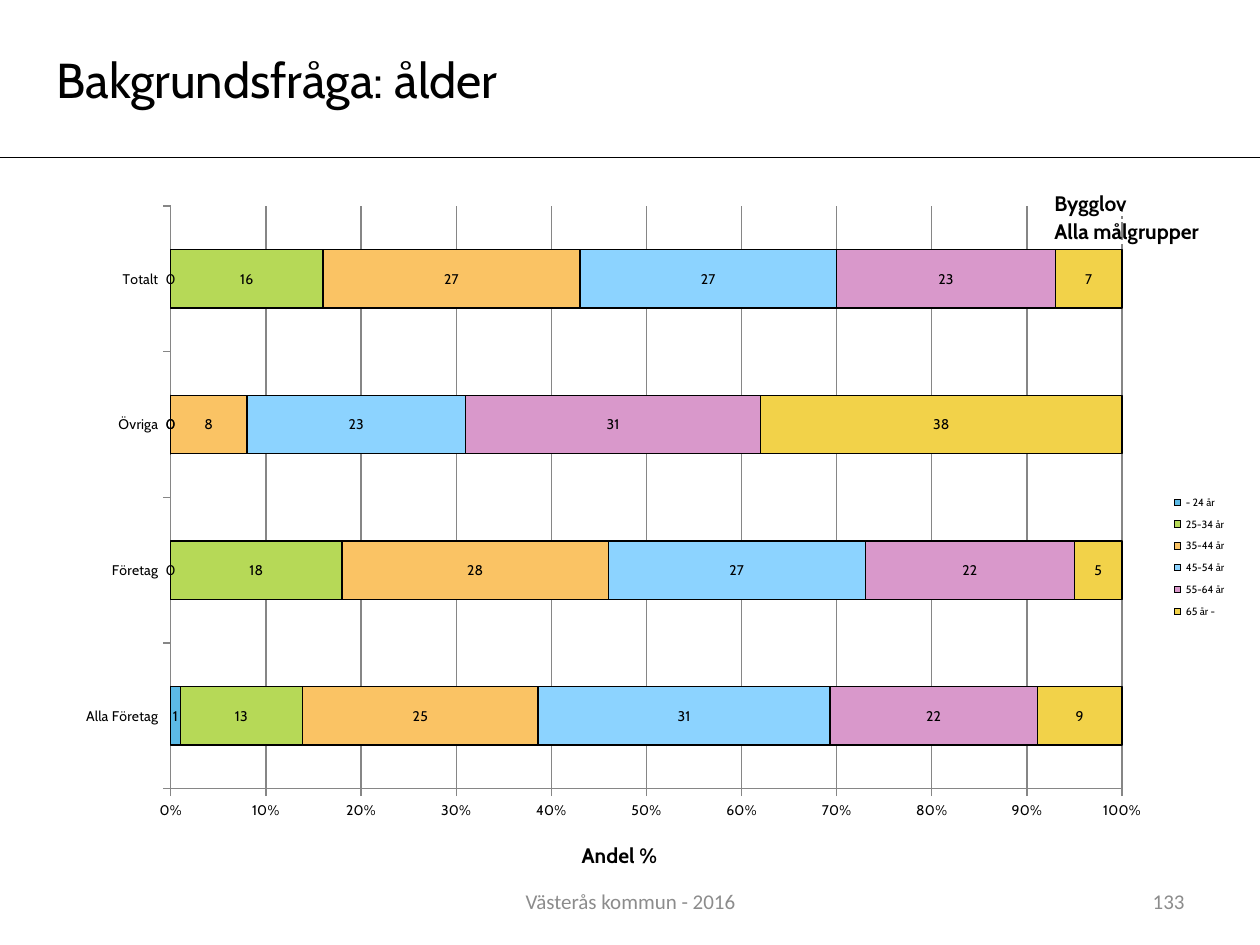
from pptx import Presentation
from pptx.chart.data import CategoryChartData
from pptx.dml.color import RGBColor
from pptx.enum.chart import XL_CHART_TYPE as ChartType, XL_LEGEND_POSITION as LegendPos
from pptx.enum.chart import XL_TICK_MARK as Tick
from pptx.enum.shapes import MSO_CONNECTOR as Connector, MSO_SHAPE as Shape
from pptx.enum.text import MSO_ANCHOR as Anchor, PP_ALIGN as Align
from pptx.oxml import parse_xml
from pptx.oxml.ns import nsdecls, qn
from pptx.util import Inches, Pt

BLACK = RGBColor(0x00, 0x00, 0x00)
WHITE = RGBColor(0xFF, 0xFF, 0xFF)
GRAY = RGBColor(0x8C, 0x8C, 0x8C)
AXIS_GRAY = RGBColor(0x86, 0x86, 0x86)

CATEGORIES = ["Alla Företag", "Företag", "Övriga", "Totalt"]
AGE_GROUPS = [
    ("- 24 år", (1, 0, 0, 0), RGBColor(0x5C, 0xBA, 0xE6)),
    ("25-34 år", (13, 18, 0, 16), RGBColor(0xB6, 0xD9, 0x57)),
    ("35-44 år", (25, 28, 8, 27), RGBColor(0xFA, 0xC3, 0x64)),
    ("45-54 år", (31, 27, 23, 27), RGBColor(0x8C, 0xD3, 0xFF)),
    ("55-64 år", (22, 22, 31, 23), RGBColor(0xD9, 0x98, 0xCB)),
    ("65 år -", (9, 5, 38, 7), RGBColor(0xF2, 0xD2, 0x49)),
]


def style_font(font, size, name="Cabin", color=BLACK, bold=False):
    """Set the face, size, colour and weight of a font."""
    font.name, font.size, font.bold = name, Pt(size), bold
    font.color.rgb = color


def write_text(shape, text, align, **style):
    """Write one vertically centred line of text into a shape."""
    tf = shape.text_frame
    tf.word_wrap = True
    tf.vertical_anchor = Anchor.MIDDLE
    p = tf.paragraphs[0]
    p.text = text
    p.alignment = align
    style_font(p.runs[0].font, **style)
    return p


def add_heading(slide, box, text, **style):
    """Add an unfilled rectangle with a white outline and left-aligned text."""
    s = slide.shapes.add_shape(Shape.RECTANGLE, *map(Inches, box))
    s.shadow.inherit = False
    s.fill.background()
    s.line.color.rgb = WHITE
    s.line.width = Pt(2)
    return write_text(s, text, Align.LEFT, **style)


def add_title(slide, box, text):
    """Add the indented slide title."""
    p = add_heading(slide, box, text, size=28)
    p._p.get_or_add_pPr().set("indent", str(Inches(0.28)))


def add_rule(slide, left, top, width):
    """Add the thin horizontal rule below the title."""
    line = slide.shapes.add_connector(
        Connector.STRAIGHT, Inches(left), Inches(top), Inches(left + width), Inches(top))
    line.line.color.rgb = BLACK
    line.line.width = Pt(0.75)
    line._element.spPr.append(parse_xml(f"<a:effectLst {nsdecls('a')}/>"))


def add_footer(slide, box, text, align):
    """Add one gray footer text."""
    s = slide.shapes.add_textbox(*map(Inches, box))
    write_text(s, text, align, size=12, name="Calibri", color=GRAY)


def set_layout(parent, index, inner=False, **fractions):
    """Place a chart part at fractions of the chart area."""
    for old in parent.findall(qn("c:layout")):
        parent.remove(old)
    target = '<c:layoutTarget val="inner"/>' if inner else ""
    modes = "".join(f'<c:{axis}Mode val="edge"/>' for axis in "xy")
    sizes = "".join(f'<c:{key} val="{value}"/>' for key, value in fractions.items())
    parent.insert(index, parse_xml(
        f"<c:layout {nsdecls('c')}><c:manualLayout>{target}{modes}{sizes}"
        "</c:manualLayout></c:layout>"))


def style_axis(axis):
    """Give an axis small text, outer ticks and a gray line."""
    style_font(axis.tick_labels.font, 8)
    axis.major_tick_mark, axis.minor_tick_mark = Tick.OUTSIDE, Tick.NONE
    axis.format.line.color.rgb = AXIS_GRAY
    axis.format.line.width = Pt(0.75)


def style_value_axis(axis):
    """Set the percent scale, gridlines and title of the value axis."""
    style_axis(axis)
    axis.minimum_scale, axis.maximum_scale, axis.major_unit = 0, 1, 0.1
    axis.tick_labels.number_format = "0%"
    axis.tick_labels.number_format_is_linked = False
    axis.has_major_gridlines = True
    axis.major_gridlines.format.line.color.rgb = AXIS_GRAY
    axis.major_gridlines.format.line.width = Pt(0.75)
    axis.has_title = True
    p = axis.axis_title.text_frame.paragraphs[0]
    p.text = "Andel %"
    style_font(p.runs[0].font, 12, bold=True)
    set_layout(axis.axis_title.element, 1, x=0.44, y=0.92)


def style_series(series, color):
    """Colour one age group and show its values."""
    series.format.fill.solid()
    series.format.fill.fore_color.rgb = color
    series.format.line.color.rgb = BLACK
    series.format.line.width = Pt(0.75)
    labels = series.data_labels
    labels.show_value = True
    style_font(labels.font, 8)


def add_age_chart(slide, box):
    """Add the stacked bar chart of age groups."""
    data = CategoryChartData()
    data.categories = CATEGORIES
    for name, values, _ in AGE_GROUPS:
        data.add_series(name, values)
    frame = slide.shapes.add_chart(ChartType.BAR_STACKED_100, *map(Inches, box), data)
    chart = frame.chart
    chart.has_title = False
    style_font(chart.font, 18, name="Calibri")
    plot = chart.plots[0]
    plot.gap_width, plot.overlap, plot.vary_by_categories = 150, 100, False
    for series, (_, _, color) in zip(plot.series, AGE_GROUPS):
        style_series(series, color)
    style_axis(chart.category_axis)
    style_value_axis(chart.value_axis)
    chart.has_legend = True
    chart.legend.position = LegendPos.RIGHT
    chart.legend.include_in_layout = False
    style_font(chart.legend.font, 6)
    set_layout(chart.legend._element, 1, x=0.94, y=0.42, w=0.06, h=0.2)
    plot_area = chart.element.find(".//" + qn("c:plotArea"))
    set_layout(plot_area, 0, inner=True, x=0.093, y=0.019, w=0.811, h=0.832)


def main():
    """Build and save the slide."""
    prs = Presentation()
    prs.slide_width, prs.slide_height = Inches(10), Inches(7.5)
    slide = prs.slides.add_slide(prs.slide_layouts[6])
    add_footer(slide, (3.42, 6.95, 3.17, 0.4), "Västerås kommun - 2016", Align.CENTER)
    add_footer(slide, (7.17, 6.95, 2.33, 0.4), "133", Align.RIGHT)
    add_age_chart(slide, (0.49, 1.53, 9.31, 5.56))
    for i, text in enumerate(("Bygglov", "Alla målgrupper")):
        add_heading(slide, (8.27, 1.53 + 0.22 * i, 1.66, 0.17), text, size=12, bold=True)
    add_rule(slide, 0, 1.25, 10)
    add_title(slide, (0.07, 0.43, 6, 0.39), "Bakgrundsfråga: ålder")
    prs.save("out.pptx")


if __name__ == "__main__":
    main()
